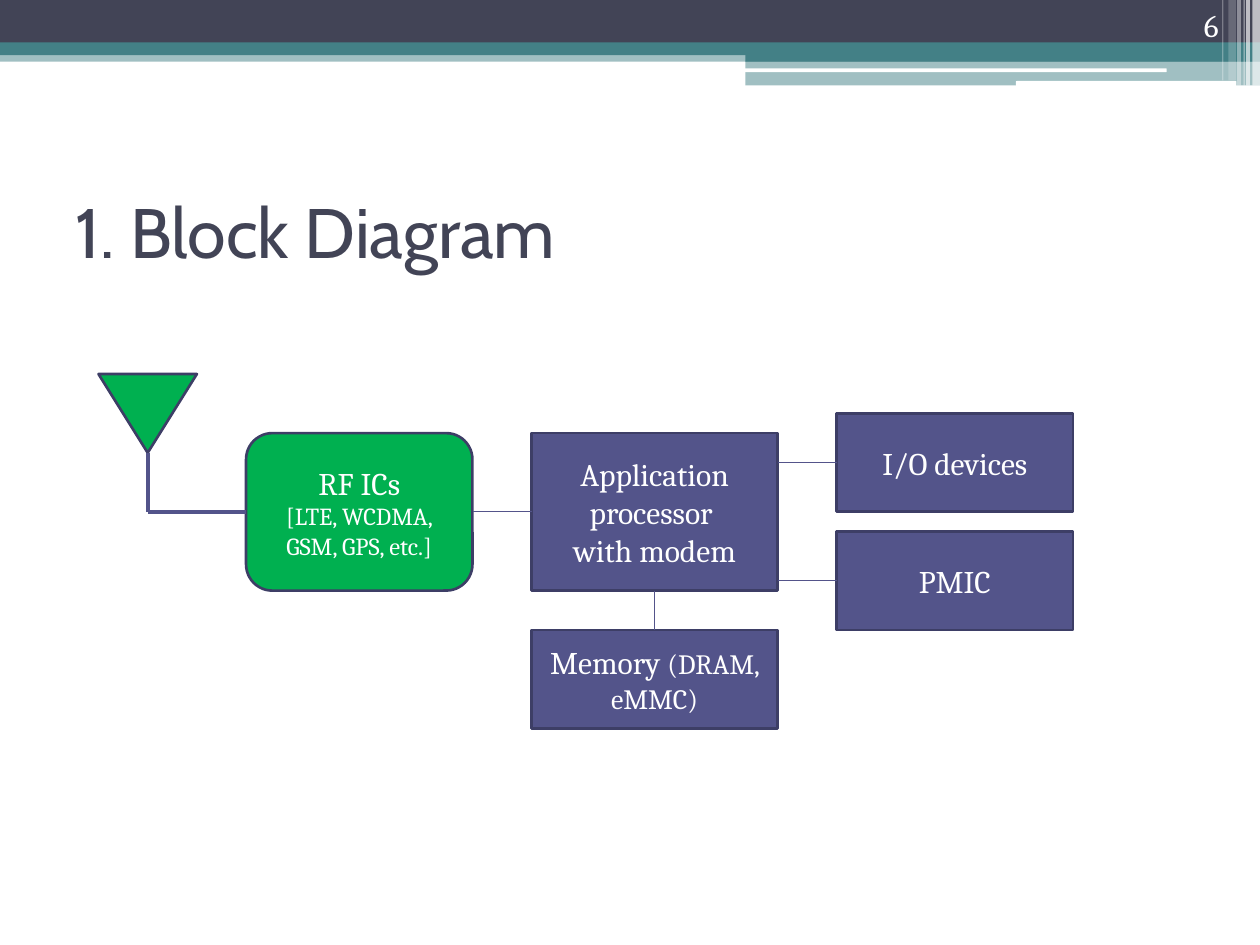
from lxml import etree
from pptx import Presentation
from pptx.dml.color import RGBColor
from pptx.enum.shapes import MSO_CONNECTOR, MSO_SHAPE
from pptx.enum.text import MSO_ANCHOR, PP_ALIGN
from pptx.oxml.ns import qn
from pptx.util import Pt

RECTANGLE = MSO_SHAPE.RECTANGLE
ROUNDED = MSO_SHAPE.ROUNDED_RECTANGLE
TRIANGLE = MSO_SHAPE.ISOSCELES_TRIANGLE
STRAIGHT = MSO_CONNECTOR.STRAIGHT
MIDDLE, BOTTOM = MSO_ANCHOR.MIDDLE, MSO_ANCHOR.BOTTOM
LEFT, CENTER, RIGHT = PP_ALIGN.LEFT, PP_ALIGN.CENTER, PP_ALIGN.RIGHT
TOP_SIDE, LEFT_SIDE, BOTTOM_SIDE, RIGHT_SIDE = range(4)

WHITE = RGBColor(0xFF, 0xFF, 0xFF)
SLATE = RGBColor(0x42, 0x44, 0x56)
TEAL = RGBColor(0x43, 0x80, 0x86)
INDIGO = RGBColor(0x53, 0x54, 0x8A)
OUTLINE = RGBColor(0x3D, 0x3E, 0x66)
GREEN = RGBColor(0x00, 0xB0, 0x50)

BANDS = [
    (RECTANGLE, 0, 28.8, 720, 6.48, TEAL, 50),
    (RECTANGLE, 0, 0, 720, 24.48, SLATE, 100),
    (RECTANGLE, 0, 24.3, 720, 7.2, TEAL, 100),
    (RECTANGLE, 426, 28.08, 294, 7.2, TEAL, 100),
    (RECTANGLE, 426, 34.6, 294, 14.2, TEAL, 50),
    (ROUNDED, 425.5, 39.1, 241.2, 2.16, WHITE, 100),
    (ROUNDED, 580.5, 46.3, 126, 2.88, WHITE, 100),
]
STRIPES = [
    (715.7, 4.3, 49, 65),
    (712.1, 2.16, 49, 65),
    (710.6, 0.72, 49, 60),
    (707, 2.16, 49, 40),
    (702, 4.3, 46, 20),
    (698.4, 0.72, 46, 30),
]


def add_text(shape, paragraphs, font="Cambria", color=WHITE, align=CENTER, anchor=MIDDLE):
    frame = shape.text_frame
    frame.word_wrap = True
    frame.vertical_anchor = anchor
    for index, spans in enumerate(paragraphs):
        para = frame.add_paragraph() if index else frame.paragraphs[0]
        para.alignment = align
        for text, size in spans:
            span = para.add_run()
            span.text = text
            span.font.name = font
            span.font.size = Pt(size)
            span.font.color.rgb = color


def add_text_box(page, left, top, width, height, text, size, **text_format):
    box = page.shapes.add_textbox(Pt(left), Pt(top), Pt(width), Pt(height))
    add_text(box, [[(text, size)]], **text_format)


def add_filled(page, kind, left, top, width, height, color, opacity=100):
    shape = page.shapes.add_shape(kind, Pt(left), Pt(top), Pt(width), Pt(height))
    shape.shadow.inherit = False
    shape.fill.solid()
    shape.fill.fore_color.rgb = color
    shape.line.fill.background()
    if opacity < 100:
        tint = shape.fill._xPr.find(".//" + qn("a:srgbClr"))
        etree.SubElement(tint, qn("a:alpha"), val=str(opacity * 1000))
    return shape


def add_block(page, left, top, width, height, paragraphs=(), kind=RECTANGLE, color=INDIGO):
    block = add_filled(page, kind, left, top, width, height, color)
    block.line.color.rgb = OUTLINE
    block.line.width = Pt(1.5)
    add_text(block, paragraphs)
    return block


def add_wire(page, start, end, width=0.75, source=None, target=None):
    wire = page.shapes.add_connector(STRAIGHT, *map(Pt, start + end))
    wire.line.color.rgb = INDIGO
    wire.line.width = Pt(width)
    etree.SubElement(wire._element.spPr, qn("a:effectLst"))
    if source:
        wire.begin_connect(*source)
    if target:
        wire.end_connect(*target)


def add_banner(page):
    for band in BANDS:
        add_filled(page, *band)
    for left, width, height, opacity in STRIPES:
        add_filled(page, RECTANGLE, left, 0, width, height, WHITE, opacity)


def add_diagram(page):
    processor = add_block(page, 303.75, 247.5, 140.63, 90,
                          [[("Application processor ", 18)], [("with modem", 18)]])
    radio = add_block(page, 140.63, 247.5, 129.37, 90,
                      [[("RF ICs", 18)], [("[LTE, WCDMA, GSM, GPS, etc.]", 14)]],
                      kind=ROUNDED, color=GREEN)
    memory = add_block(page, 303.75, 360, 140.63, 56.25,
                       [[("Memory ", 18), ("(DRAM, eMMC)", 16)]])
    antenna = add_block(page, 56.25, 213.75, 56.25, 45, kind=TRIANGLE, color=GREEN)
    antenna.rotation = 180

    add_wire(page, (84.38, 258.75), (84.38, 292.5), width=2.25)
    add_wire(page, (84.38, 292.5), (140.63, 292.5), width=2.25, target=(radio, LEFT_SIDE))
    add_wire(page, (270, 292.5), (303.75, 292.5),
             source=(radio, RIGHT_SIDE), target=(processor, LEFT_SIDE))
    add_wire(page, (374.06, 337.5), (374.06, 360),
             source=(processor, BOTTOM_SIDE), target=(memory, TOP_SIDE))

    for label, top, wire_y in (("PMIC", 303.75, 331.88), ("I/O devices", 236.25, 264.38)):
        peripheral = add_block(page, 478.13, top, 135, 56.25, [[(label, 18)]])
        add_wire(page, (444.38, wire_y), (478.13, wire_y), target=(peripheral, LEFT_SIDE))


def main():
    deck = Presentation()
    deck.slide_width, deck.slide_height = Pt(720), Pt(540)
    page = deck.slides.add_slide(deck.slide_layouts[6])
    add_banner(page)
    add_text_box(page, 36, 90, 648, 84, "1. Block Diagram", 40,
                 font="Cabin", color=SLATE, align=LEFT)
    add_diagram(page)
    add_text_box(page, 643.5, 0, 60, 28.8, "6", 18, align=RIGHT, anchor=BOTTOM)
    deck.save("out.pptx")


if __name__ == "__main__":
    main()
